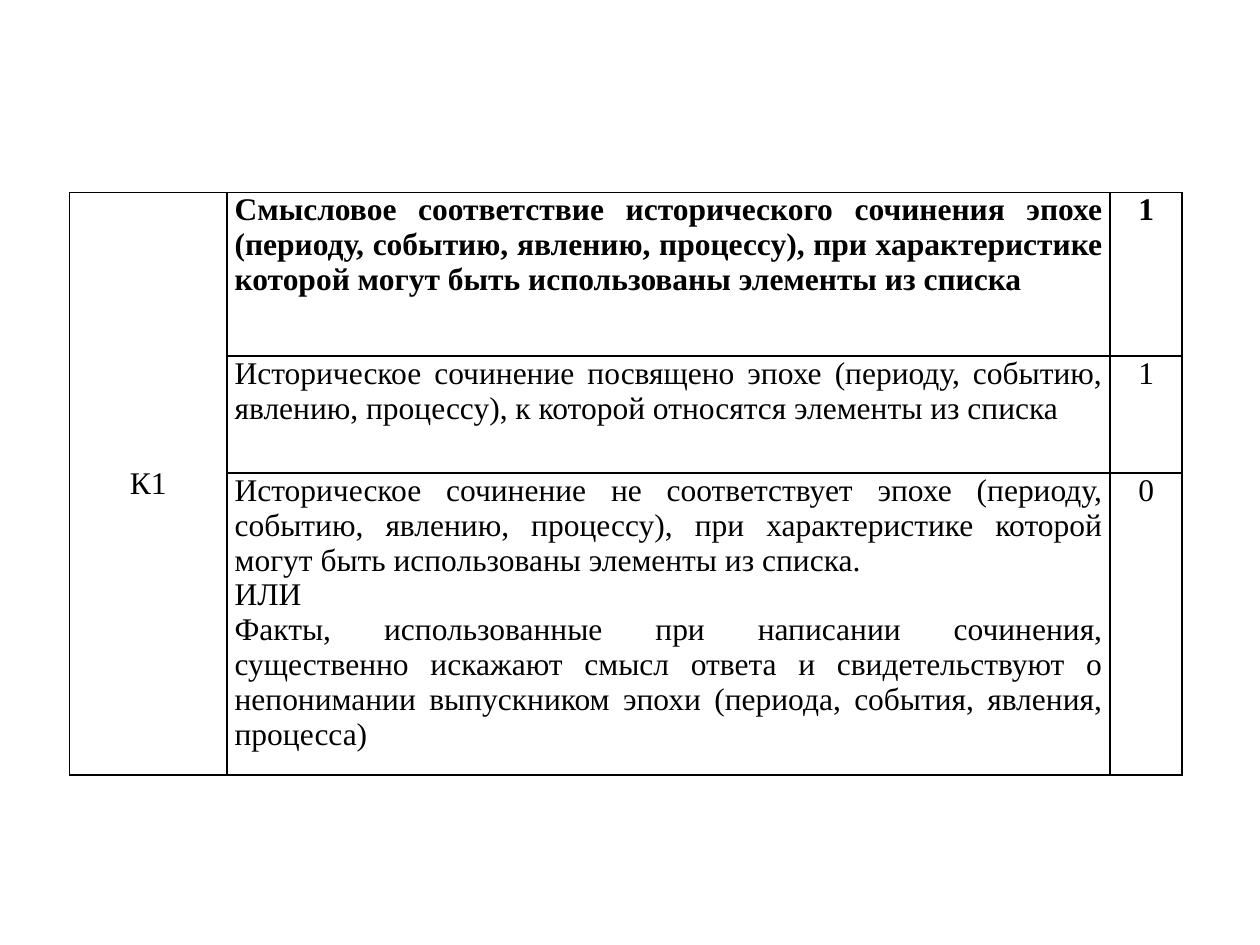
from lxml.etree import fromstring
from pptx import Presentation
from pptx.dml.color import RGBColor
from pptx.enum.text import MSO_ANCHOR as Anchor, PP_ALIGN as Align
from pptx.oxml.ns import nsdecls
from pptx.util import Cm, Pt

FONT = "Times New Roman"
BLACK = "000000"
COLUMN_SHARES = (3.18, 17.8, 1.45)
ROW_SHARES = (3.3, 2.36, 6.08)
CRITERION = "К1"
LEVELS = (
    ("Смысловое соответствие исторического сочинения эпохе (периоду, событию, "
     "явлению, процессу), при характеристике которой могут быть использованы "
     "элементы из списка", "1"),
    ("Историческое сочинение посвящено эпохе (периоду, событию, явлению, "
     "процессу), к которой относятся элементы из списка", "1"),
    ("Историческое сочинение не соответствует эпохе (периоду, событию, явлению, "
     "процессу), при характеристике которой могут быть использованы элементы "
     "из списка.\nИЛИ\n"
     "Факты, использованные при написании сочинения, существенно искажают смысл "
     "ответа и свидетельствуют о непонимании выпускником эпохи (периода, "
     "события, явления, процесса)", "0"),
)


def color(value):
    """Turn a hex string into a colour."""
    return RGBColor.from_string(value)


def set_borders(cell, width=Pt(1)):
    """Draw a solid black line on all four sides of a cell."""
    properties = cell._tc.get_or_add_tcPr()
    for index, side in enumerate("LRTB"):
        properties.insert(index, fromstring(
            f'<a:ln{side} {nsdecls("a")} w="{width}"><a:solidFill>'
            f'<a:srgbClr val="{BLACK}"/></a:solidFill></a:ln{side}>'))


def fill_cell(cell, text, alignment, bold=False):
    """Write text into a cell and format its paragraphs."""
    cell.text_frame.text = text
    for paragraph in cell.text_frame.paragraphs:
        paragraph.alignment = alignment
        for run in paragraph.runs:
            run.font.name = FONT
            run.font.size = Pt(18)
            run.font.bold = bold
            run.font.color.rgb = color(BLACK)


def format_cell(cell):
    """Give a cell its margins, empty fill and borders."""
    cell.margin_left = cell.margin_right = Cm(0.15)
    cell.margin_top = cell.margin_bottom = 0
    cell.fill.background()
    set_borders(cell)


def add_criteria_table(slide, left, top, width, height):
    """Add the scoring table, sharing the given box among its rows and columns."""
    table = slide.shapes.add_table(
        len(ROW_SHARES), len(COLUMN_SHARES), left, top, width, height).table
    table.first_row = table.horz_banding = False
    for column, share in zip(table.columns, COLUMN_SHARES):
        column.width = int(width * share / sum(COLUMN_SHARES))
    for row, share in zip(table.rows, ROW_SHARES):
        row.height = int(height * share / sum(ROW_SHARES))
    for cell in table.iter_cells():
        format_cell(cell)

    criterion = table.cell(0, 0)
    criterion.merge(table.cell(len(LEVELS) - 1, 0))
    criterion.vertical_anchor = Anchor.MIDDLE
    fill_cell(criterion, CRITERION, Align.CENTER)
    for index, (description, score) in enumerate(LEVELS):
        heading = index == 0
        fill_cell(table.cell(index, 1), description, Align.JUSTIFY, heading)
        fill_cell(table.cell(index, 2), score, Align.CENTER, heading)


def main():
    """Build and save the presentation."""
    presentation = Presentation()
    presentation.slide_width, presentation.slide_height = Cm(25.4), Cm(19.05)
    slide = presentation.slides.add_slide(presentation.slide_layouts[6])
    add_criteria_table(slide, Cm(1.4), Cm(3.88), Cm(22.43), Cm(11.74))
    presentation.save("out.pptx")


if __name__ == "__main__":
    main()
